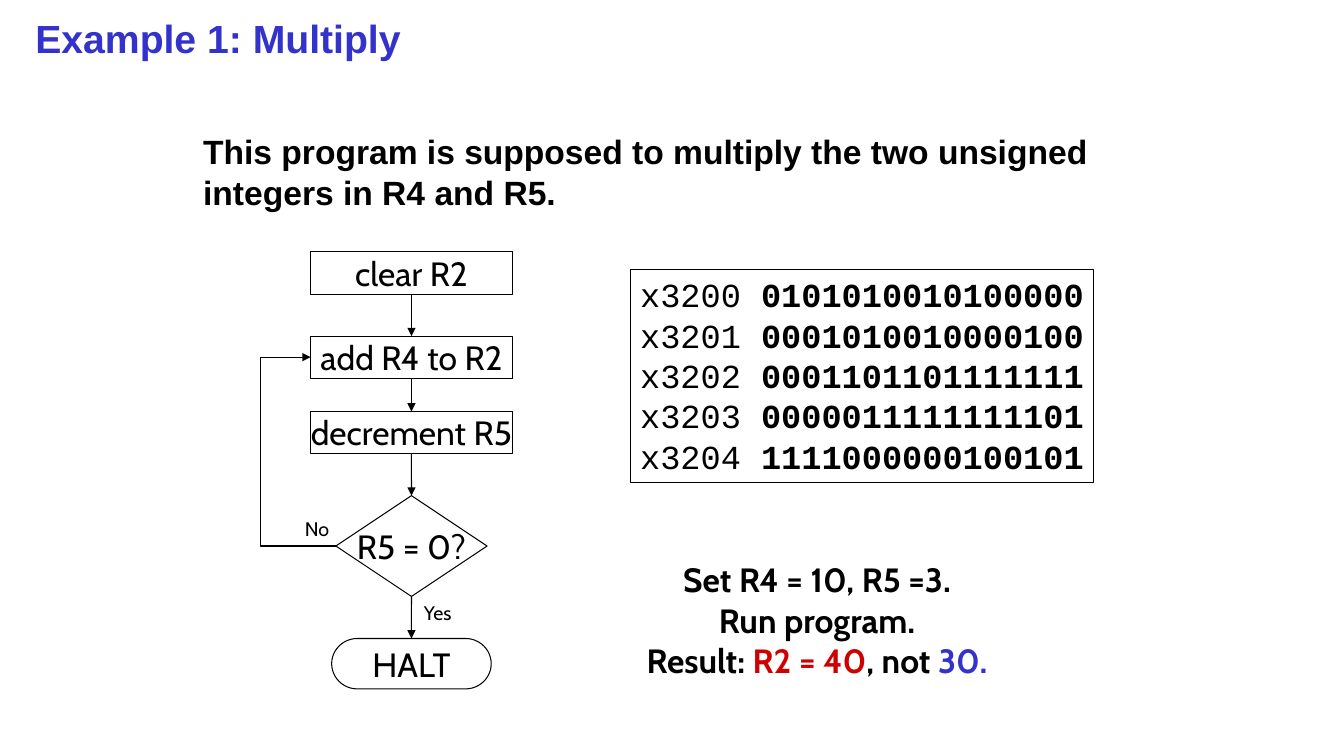
"""Build the multiply example slide with its flowchart and machine code."""
from lxml import etree
from pptx import Presentation
from pptx.dml.color import RGBColor
from pptx.enum.shapes import MSO_CONNECTOR, MSO_SHAPE
from pptx.enum.text import MSO_ANCHOR, PP_ALIGN
from pptx.oxml.ns import qn
from pptx.util import Cm, Pt

BLACK = RGBColor(0x00, 0x00, 0x00)
BLUE = RGBColor(0x33, 0x33, 0xCC)
RED = RGBColor(0xCE, 0x00, 0x00)
STRAIGHT, ELBOW = MSO_CONNECTOR.STRAIGHT, MSO_CONNECTOR.ELBOW
RECTANGLE = MSO_SHAPE.RECTANGLE
PROCESS = MSO_SHAPE.FLOWCHART_PROCESS
DECISION = MSO_SHAPE.FLOWCHART_DECISION
TERMINATOR = MSO_SHAPE.FLOWCHART_TERMINATOR
TOP, MIDDLE = MSO_ANCHOR.TOP, MSO_ANCHOR.MIDDLE
LEFT, CENTER = PP_ALIGN.LEFT, PP_ALIGN.CENTER
TOP_SIDE, LEFT_SIDE, BOTTOM_SIDE = 0, 1, 2

FLOW_CENTER = 10.37
STEPS = [
    ("clear R2", PROCESS, 6.35, 5.08, 1.06),
    ("add R4 to R2", PROCESS, 8.47, 5.08, 1.06),
    ("decrement R5", PROCESS, 10.37, 5.08, 1.06),
    ("R5 = 0?", DECISION, 12.49, 3.81, 2.54),
    ("HALT", TERMINATOR, 16.09, 4.02, 1.27),
]
CODE = [
    ("x3200", "0101010010100000"),
    ("x3201", "0001010010000100"),
    ("x3202", "0001101101111111"),
    ("x3203", "0000011111111101"),
    ("x3204", "1111000000100101"),
]


def write(shape, paragraphs, font="Cabin", size=24, bold=False, color=BLACK,
          align=CENTER, anchor=TOP, wrap=False, before=0):
    """Fill a shape with paragraphs of (text, overrides) runs."""
    frame = shape.text_frame
    frame.word_wrap = wrap
    frame.vertical_anchor = anchor
    for index, runs in enumerate(paragraphs):
        paragraph = frame.paragraphs[0] if index == 0 else frame.add_paragraph()
        paragraph.alignment = align
        paragraph.space_before = Pt(before)
        for text, overrides in runs:
            for number, line in enumerate(text.split("\n")):
                if number:
                    paragraph.add_line_break()
                run = paragraph.add_run()
                run.text = line
                run.font.name = font
                run.font.size = Pt(size)
                run.font.bold = overrides.get("bold", bold)
                run.font.color.rgb = overrides.get("color", color)


class SlideBuilder:
    """Draw elements in one style on the current slide."""

    def __init__(self, slide, line_width=0.75):
        self.slide = slide
        self.line_width = Pt(line_width)

    def text(self, paragraphs, left, top, width, height, **style):
        """Add a text box."""
        box = self.slide.shapes.add_textbox(Cm(left), Cm(top), Cm(width), Cm(height))
        write(box, paragraphs, **style)

    def shape(self, kind, paragraphs, left, top, width, height, **style):
        """Add an outlined shape with text."""
        shape = self.slide.shapes.add_shape(
            kind, Cm(left), Cm(top), Cm(width), Cm(height))
        shape.shadow.inherit = False
        shape.fill.background()
        shape.line.color.rgb = BLACK
        shape.line.width = self.line_width
        write(shape, paragraphs, **style)
        return shape

    def arrow(self, kind, start, start_side, end, end_side, bend=None):
        """Join two shapes with an arrow, optionally bent at a given ratio."""
        connector = self.slide.shapes.add_connector(kind, 0, 0, 0, 0)
        connector.begin_connect(start, start_side)
        connector.end_connect(end, end_side)
        connector.line.color.rgb = BLACK
        connector.line.width = self.line_width
        properties = connector._element.spPr
        line = properties.find(qn("a:ln"))
        etree.SubElement(line, qn("a:tailEnd"), type="triangle")
        etree.SubElement(properties, qn("a:effectLst"))
        if bend is not None:
            guides = properties.find(qn("a:prstGeom")).find(qn("a:avLst"))
            etree.SubElement(guides, qn("a:gd"), name="adj1",
                             fmla=f"val {round(bend * 100000)}")


def main():
    """Compose the slide and save it."""
    presentation = Presentation()
    presentation.slide_width = Cm(33.87)
    presentation.slide_height = Cm(19.05)
    slide = presentation.slides.add_slide(presentation.slide_layouts[6])
    builder = SlideBuilder(slide)

    builder.text([[("Example 1: Multiply", {})]], 0.64, 0.21, 32.17, 1.48,
                 font="Arial", size=28, bold=True, color=BLUE,
                 align=LEFT, anchor=MIDDLE, wrap=True)
    statement = ("This program is supposed to multiply the two unsigned\n"
                 "integers in R4 and R5.")
    builder.text([[(statement, {})]], 4.87, 3.18, 24.13, 2.75, font="Arial",
                 bold=True, align=LEFT, wrap=True, before=4.8)

    listing = [[(address, {}), (f" {word}", {"bold": True})]
               for address, word in CODE]
    builder.shape(RECTANGLE, listing, 15.88, 6.79, 11.68, 5.37,
                  font="Courier New")

    steps = [builder.shape(kind, [[(label, {})]], FLOW_CENTER - width / 2, top,
                           width, height, anchor=MIDDLE)
             for label, kind, top, width, height in STEPS]
    for upper, lower in zip(steps, steps[1:]):
        builder.arrow(STRAIGHT, upper, BOTTOM_SIDE, lower, TOP_SIDE)
    builder.arrow(ELBOW, steps[3], LEFT_SIDE, steps[1], LEFT_SIDE, bend=2.98)
    builder.text([[("No", {})]], 7.42, 12.9, 1.14, 0.85, size=14)
    builder.text([[("Yes", {})]], 10.41, 15.03, 1.24, 0.85, size=14)

    result = [("Result: ", {}), ("R2 = 40", {"color": RED}), (", not", {}),
              (" 30.", {"color": BLUE})]
    builder.text([[("Set R4 = 10, R5 =3.", {})], [("Run program.", {})], result],
                 15.19, 13.97, 10.8, 3.33, bold=True)
    presentation.save("out.pptx")


if __name__ == "__main__":
    main()
